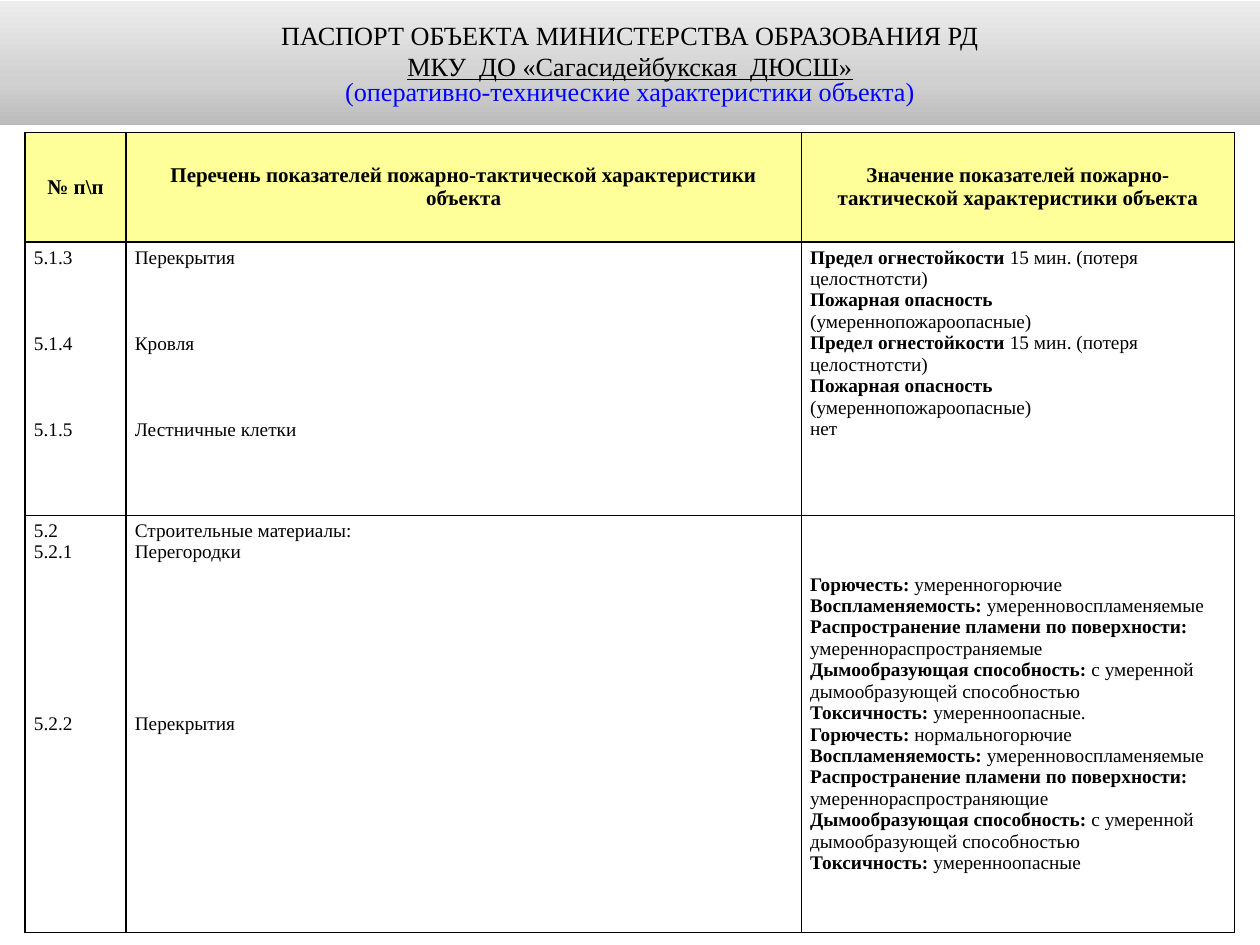
"""Build a one-slide fire-safety passport: gradient title over a characteristics table."""
from copy import deepcopy

from lxml import etree
from pptx import Presentation
from pptx.dml.color import RGBColor
from pptx.enum.text import MSO_ANCHOR, MSO_AUTO_SIZE, PP_ALIGN
from pptx.oxml.ns import qn
from pptx.util import Inches, Pt

CENTER, MIDDLE, TOP = PP_ALIGN.CENTER, MSO_ANCHOR.MIDDLE, MSO_ANCHOR.TOP
FONT = "Times New Roman"
LINE = 12.3


def rgb(value):
    return RGBColor.from_string(value)


def style(p, size, color="000000", bold=False):
    p.font.name, p.font.size, p.font.bold = FONT, Pt(size), bold
    p.font.color.rgb = rgb(color)


prs = Presentation()
prs.slide_width, prs.slide_height = Inches(10), Inches(7.5)
s = prs.slides.add_slide(prs.slide_layouts[5])

title = s.shapes.title
title.left, title.top = 0, Inches(0.01)
title.width, title.height = prs.slide_width, Inches(0.98)
title.fill.gradient()
title.fill.gradient_angle = 90
stops = title._element.spPr.find(".//" + qn("a:gsLst"))
stops.insert(1, deepcopy(stops[0]))
shades = [(0, "BCBCBC"), (0.35, "D0D0D0"), (1, "EDEDED")]
for stop, (position, color) in zip(title.fill.gradient_stops, shades):
    stop.position, stop.color.rgb = position, rgb(color)

tf = title.text_frame
tf.auto_size, tf.vertical_anchor, tf.word_wrap = MSO_AUTO_SIZE.NONE, MIDDLE, True
tf.text = "\n".join([
    "ПАСПОРТ ОБЪЕКТА МИНИСТЕРСТВА ОБРАЗОВАНИЯ РД",
    "МКУ  ДО «Сагасидейбукская  ДЮСШ»",
    "(оперативно-технические характеристики объекта)",
])
for p, color in zip(tf.paragraphs, ["000000", "000000", "0000FF"]):
    p.alignment = CENTER
    style(p, 15, color)
tf.paragraphs[1].font.underline = True
tf.paragraphs[2].line_spacing = 0.8

limits = ["Предел огнестойкости |15 мин. (потеря целостнотсти)",
          "Пожарная опасность|", "|(умереннопожароопасные)"]
materials = []
for burning, spreading, toxicity in [
    ("умеренногорючие", "умереннораспространяемые", "умеренноопасные."),
    ("нормальногорючие", "умереннораспространяющие", "умеренноопасные"),
]:
    materials += [
        f"Горючесть: |{burning}",
        "Воспламеняемость: |умеренновоспламеняемые",
        "Распространение пламени по поверхности:|",
        f"|{spreading}",
        "Дымообразующая способность: |с умеренной дымообразующей способностью",
        f"Токсичность: |{toxicity}",
    ]

rows = [
    [["№ п\\п|"],
     ["Перечень показателей пожарно-тактической характеристики объекта|"],
     ["Значение показателей пожарно-тактической характеристики объекта|"]],
    [["|5.1.3", "|5.1.4", "|5.1.5"],
     ["|Перекрытия", "|Кровля", "|Лестничные клетки"],
     limits * 2 + ["|нет"]],
    [["|5.2", "|5.2.1", "|5.2.2"],
     ["|Строительные материалы:", "|Перегородки", "|Перекрытия"],
     materials],
]
skipped_lines = [[0], [0, 3, 3], [0, 0, 7]]
widths, heights = [0.8, 5.36, 3.44], [0.87, 2.17, 3.31]

table = s.shapes.add_table(3, 3, Inches(0.2), Inches(1.05),
                           Inches(sum(widths)), Inches(sum(heights))).table
for column, width in zip(table.columns, widths):
    column.width = Inches(width)
for row, height in zip(table.rows, heights):
    row.height = Inches(height)

for i, row in enumerate(rows):
    for j, lines in enumerate(row):
        cell = table.cell(i, j)
        cell.margin_left = cell.margin_right = Inches(0.07)
        cell.margin_top = cell.margin_bottom = Inches(0.04)
        cell.vertical_anchor = MIDDLE if i == 0 or (i, j) == (2, 2) else TOP
        for side in ["a:lnL", "a:lnR", "a:lnT", "a:lnB"]:
            ln = etree.SubElement(cell._tc.get_or_add_tcPr(), qn(side), w=str(Pt(1)))
            fill = etree.SubElement(ln, qn("a:solidFill"))
            etree.SubElement(fill, qn("a:srgbClr"), val="000000")
        cell.fill.solid()
        cell.fill.fore_color.rgb = rgb("FFFFFF" if i else "FFFF99")
        gaps = skipped_lines[i] if j < 2 else [0] * len(lines)
        for k, (line, gap) in enumerate(zip(lines, gaps)):
            p = cell.text_frame.add_paragraph() if k else cell.text_frame.paragraphs[0]
            style(p, 11 if i else 12)
            p.alignment = PP_ALIGN.LEFT if i else CENTER
            p.space_before = Pt(gap * LINE)
            for text, bold in zip(line.split("|"), [True, False]):
                if text:
                    r = p.add_run()
                    r.text, r.font.bold = text, bold

prs.save("out.pptx")
